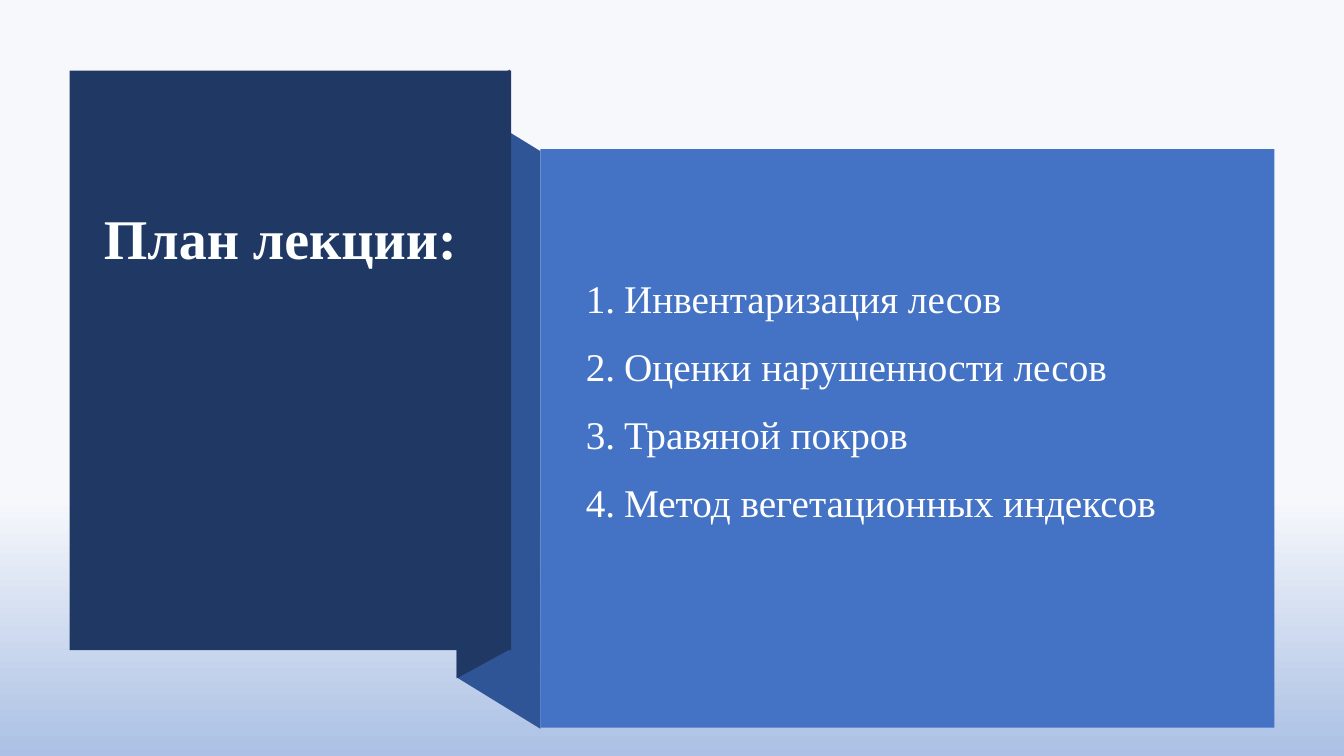
from dataclasses import dataclass

from lxml import etree
from pptx import Presentation
from pptx.dml.color import RGBColor
from pptx.enum.shapes import MSO_SHAPE
from pptx.enum.text import MSO_ANCHOR, PP_ALIGN
from pptx.oxml.ns import qn
from pptx.shapes.base import BaseShape
from pptx.slide import Slide
from pptx.text.text import _Paragraph as Paragraph
from pptx.util import Inches, Pt

NAVY, BLUE, LIGHT_BLUE = "203864", "2F5597", "4472C4"
FONT = "Times New Roman"
GRADIENT = [(66, "F6F8FC"), (100, "ABC0E4"), (100, "ABC0E4"), (100, "C7D5ED")]
TOPICS = [
    "Инвентаризация лесов",
    "Оценки нарушенности лесов",
    "Травяной покров",
    "Метод вегетационных индексов",
]


@dataclass
class Fold:
    points: list[tuple[float, float]]
    color: str


@dataclass
class Panel:
    left: float
    top: float
    width: float
    height: float
    color: str


FOLDS = [
    Fold([(5.36, 7.23), (4.53, 6.72), (4.53, 0.99), (5.36, 1.5)], BLUE),
    Fold([(5.06, 6.44), (4.53, 6.73), (4.53, 0.98), (5.06, 0.69)], NAVY),
]
PANELS = [
    Panel(0.69, 0.7, 4.38, 5.75, NAVY),
    Panel(5.36, 1.48, 7.28, 5.74, LIGHT_BLUE),
]


def rgb(color: str) -> RGBColor:
    return RGBColor.from_string(color)


def paint(shape: BaseShape, color: str) -> None:
    shape.shadow.inherit = False
    shape.fill.solid()
    shape.fill.fore_color.rgb = rgb(color)
    shape.line.fill.background()


def add_fold(slide: Slide, fold: Fold) -> None:
    points = [(Inches(x), Inches(y)) for x, y in fold.points]
    builder = slide.shapes.build_freeform(*points[0], scale=1.0)
    builder.add_line_segments(points[1:], close=True)
    paint(builder.convert_to_shape(), fold.color)


def add_panel(slide: Slide, panel: Panel) -> None:
    box = [Inches(n) for n in (panel.left, panel.top, panel.width, panel.height)]
    paint(slide.shapes.add_shape(MSO_SHAPE.RECTANGLE, *box), panel.color)


def set_background(slide: Slide) -> None:
    fill = slide.background.fill
    fill.gradient()
    fill.gradient_angle = 270
    stops = next(slide.element.iter(qn("a:gsLst")))
    for stop in list(stops):
        stops.remove(stop)
    for position, color in GRADIENT:
        stop = etree.SubElement(stops, qn("a:gs"), pos=str(position * 1000))
        etree.SubElement(stop, qn("a:srgbClr"), val=color)


def place(slide: Slide, shape: BaseShape, left: float, top: float, width: float, height: float) -> None:
    """Position a placeholder and bring it in front of the panels."""
    shape.left, shape.top = Inches(left), Inches(top)
    shape.width, shape.height = Inches(width), Inches(height)
    shape.text_frame.word_wrap = True
    shape.text_frame.vertical_anchor = MSO_ANCHOR.TOP
    slide.shapes.element.append(shape.element)


def add_run(paragraph: Paragraph, text: str, size: float, color: str, bold: bool = False) -> None:
    run = paragraph.add_run()
    run.text = text
    run.font.name, run.font.size, run.font.bold = FONT, Pt(size), bold
    run.font.color.rgb = rgb(color)


def number(paragraph: Paragraph) -> None:
    properties = paragraph._p.get_or_add_pPr()
    properties.set("marL", str(Inches(0.38)))
    properties.set("indent", str(-Inches(0.38)))
    etree.SubElement(properties, qn("a:buFont"), typeface=FONT)
    etree.SubElement(properties, qn("a:buAutoNum"), type="arabicPeriod")


def main() -> None:
    presentation = Presentation()
    presentation.slide_width, presentation.slide_height = Inches(13.33), Inches(7.5)
    slide = presentation.slides.add_slide(presentation.slide_layouts[1])
    set_background(slide)

    # Folded ribbon
    for fold in FOLDS:
        add_fold(slide, fold)
    for panel in PANELS:
        add_panel(slide, panel)

    # Numbered topics
    body = slide.placeholders[1]
    place(slide, body, 5.71, 2.6, 6.51, 4.02)
    frame = body.text_frame
    for index, topic in enumerate(TOPICS):
        paragraph = frame.add_paragraph() if index else frame.paragraphs[0]
        paragraph.alignment = PP_ALIGN.JUSTIFY
        paragraph.line_spacing = 1.15
        paragraph.space_before = Pt(10 if index else 0)
        number(paragraph)
        add_run(paragraph, topic, 28, "FFFFFF")

    # Heading
    title = slide.shapes.title
    place(slide, title, 0.93, 1.97, 6.67, 0.77)
    heading = title.text_frame.paragraphs[0]
    heading.alignment = PP_ALIGN.LEFT
    add_run(heading, "План лекции:", 40, "FEFFFF", bold=True)

    presentation.save("out.pptx")


if __name__ == "__main__":
    main()
